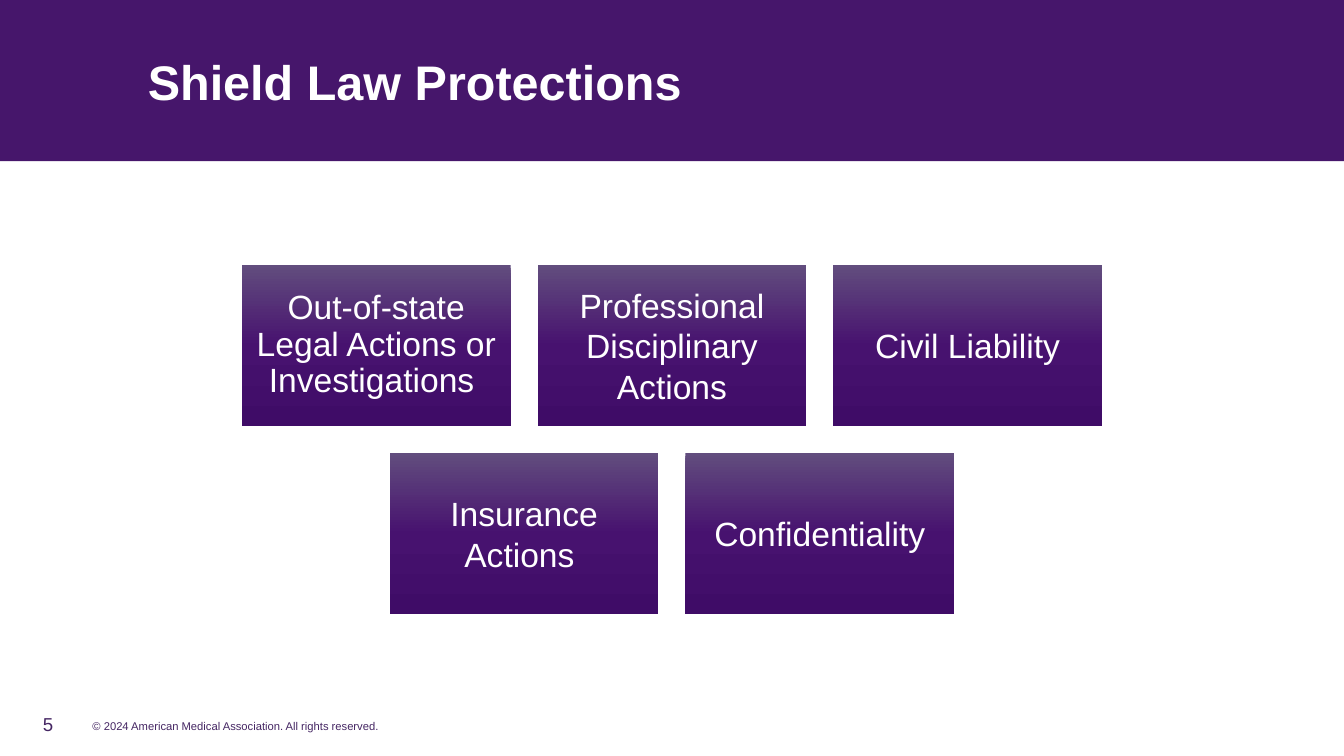
from copy import deepcopy

from pptx import Presentation
from pptx.dml.color import RGBColor
from pptx.enum.shapes import MSO_SHAPE
from pptx.enum.text import MSO_ANCHOR, PP_ALIGN
from pptx.oxml.ns import qn
from pptx.util import Inches, Pt

RECTANGLE = MSO_SHAPE.RECTANGLE
TOP, MIDDLE = MSO_ANCHOR.TOP, MSO_ANCHOR.MIDDLE
LEFT, CENTER = PP_ALIGN.LEFT, PP_ALIGN.CENTER

TITLE = "Shield Law Protections"
PROTECTION_ROWS = [
    [("Out-of-state Legal Actions or Investigations ", 0.9),
     ("Professional Disciplinary Actions", 1.0),
     ("Civil Liability", 1.0)],
    [("Insurance Actions ", 1.0), ("Confidentiality", 1.0)],
]
COPYRIGHT = "© 2024 American Medical Association. All rights reserved."
PAGE_NUMBER = "5"

COLORS = {
    "band": "46166B",
    "footer": "452663",
    "white": "FFFFFF",
    "card_top": "624D7E",
    "card_middle": "47126F",
    "card_bottom": "3F0C67",
}
CARD_GRADIENT = [(0, "card_top"), (0.5, "card_middle"), (1, "card_bottom")]

SLIDE_WIDTH = 10
SLIDE_HEIGHT = SLIDE_WIDTH * 9 / 16
CARD_WIDTH, CARD_HEIGHT, CARD_GAP, CARDS_TOP = 2, 1.2, 0.2, 1.97


def color(name):
    return RGBColor.from_string(COLORS[name])


def write_text(shape, text, size, color_name, bold=False, align=LEFT,
               anchor=MIDDLE, margins=(0.1, 0.05, 0.1, 0.05), line_spacing=None):
    frame = shape.text_frame
    frame.word_wrap = True
    frame.vertical_anchor = anchor
    for side, margin in zip(("left", "top", "right", "bottom"), margins):
        setattr(frame, f"margin_{side}", Inches(margin))
    paragraph = frame.paragraphs[0]
    paragraph.text = text
    paragraph.alignment = align
    paragraph.line_spacing = line_spacing
    font_format = {"name": "Arial", "size": Pt(size), "bold": bold}
    for name, value in font_format.items():
        setattr(paragraph.runs[0].font, name, value)
    paragraph.runs[0].font.color.rgb = color(color_name)


def add_rectangle(slide, left, top, width, height):
    shape = slide.shapes.add_shape(
        RECTANGLE, Inches(left), Inches(top), Inches(width), Inches(height))
    shape.shadow.inherit = False
    shape.line.fill.background()
    return shape


def fill_gradient(shape):
    shape.fill.gradient()
    shape.fill.gradient_angle = 270
    stop_list = shape._element.spPr.find(qn("a:gradFill")).find(qn("a:gsLst"))
    stop_list.insert(1, deepcopy(stop_list[0]))
    for stop, (position, color_name) in zip(shape.fill.gradient_stops, CARD_GRADIENT):
        stop.position = position
        stop.color.rgb = color(color_name)


def add_title_band(slide):
    band = add_rectangle(slide, 0, 0, SLIDE_WIDTH, 1.2)
    band.fill.solid()
    band.fill.fore_color.rgb = color("band")
    write_text(band, TITLE, 26, "white", bold=True, margins=(1.1, 0.05, 0.1, 0.05))


def add_cards(slide):
    for row_index, row in enumerate(PROTECTION_ROWS):
        row_width = len(row) * (CARD_WIDTH + CARD_GAP) - CARD_GAP
        row_left = (SLIDE_WIDTH - row_width) / 2
        top = CARDS_TOP + row_index * (CARD_HEIGHT + CARD_GAP)
        for column, (text, line_spacing) in enumerate(row):
            left = row_left + column * (CARD_WIDTH + CARD_GAP)
            card = add_rectangle(slide, left, top, CARD_WIDTH, CARD_HEIGHT)
            fill_gradient(card)
            write_text(card, text, 18, "white", align=CENTER,
                       margins=(0.07,) * 4, line_spacing=line_spacing)


def add_footer(slide):
    copyright_box = slide.shapes.add_textbox(
        Inches(0.59), Inches(5.3), Inches(2.76), Inches(0.2))
    write_text(copyright_box, COPYRIGHT, 6, "footer", anchor=TOP)
    number_box = slide.shapes.add_textbox(
        Inches(0.22), Inches(5.24), Inches(1.01), Inches(0.3))
    write_text(number_box, PAGE_NUMBER, 10, "footer")


def main():
    presentation = Presentation()
    presentation.slide_width = Inches(SLIDE_WIDTH)
    presentation.slide_height = Inches(SLIDE_HEIGHT)
    slide = presentation.slides.add_slide(presentation.slide_layouts[6])
    add_footer(slide)
    add_title_band(slide)
    add_cards(slide)
    presentation.save("out.pptx")


if __name__ == "__main__":
    main()
